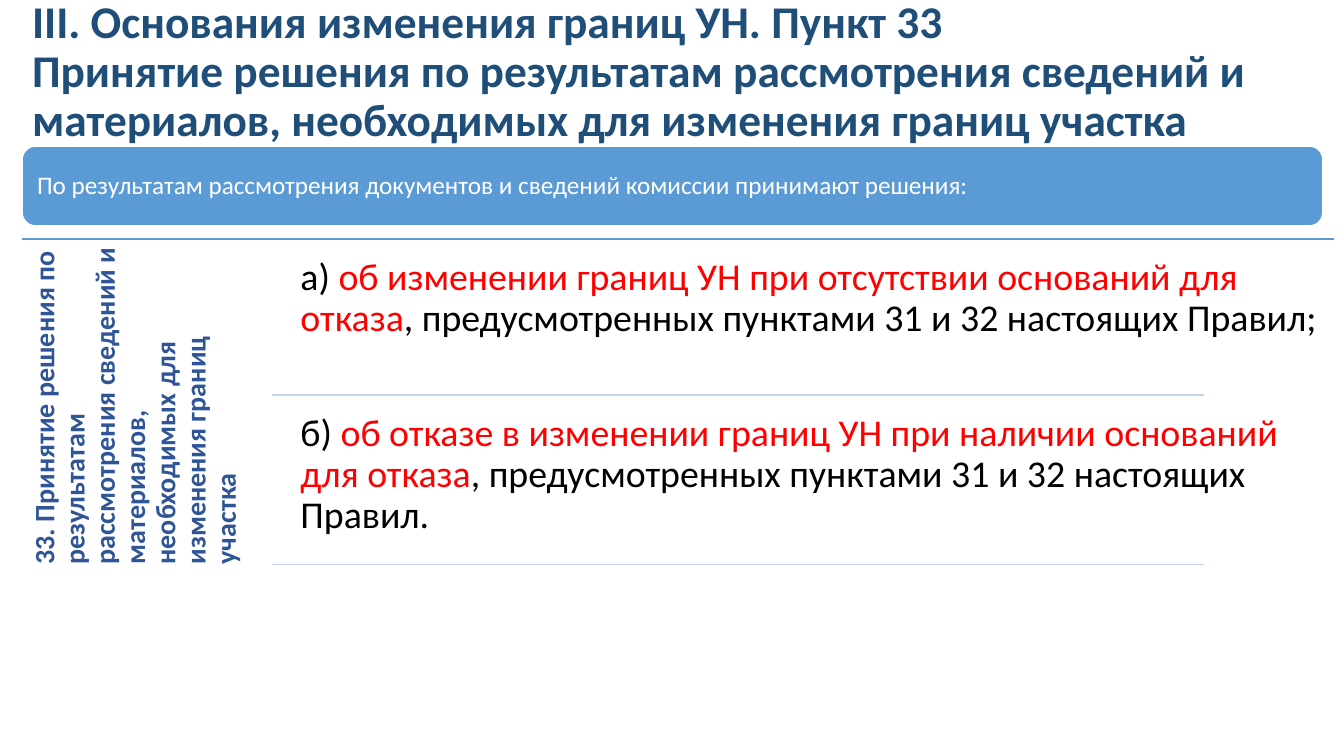
from dataclasses import dataclass

from lxml import etree
from pptx import Presentation
from pptx import util as u
from pptx.dml import color as col
from pptx.enum import shapes, text
from pptx.oxml import ns


@dataclass(frozen=True)
class Theme:
    font: str = "Calibri"
    # Colours
    title: str = "1F4E79"
    side: str = "2F5597"
    blue: str = "5B9BD5"
    pale: str = "C4D5EB"
    white: str = "FFFFFF"
    black: str = "000000"
    red: str = "FF0000"
    # Type sizes in points
    head: float = 32.4
    body: float = 27
    label: float = 20
    note: float = 18


def rgb(code):
    return col.RGBColor.from_string(code)


def write(frame, parts, font, size, bold=False, inset=0.1, mid=False, turn=None):
    """Fill a frame with (text, colour) parts; a newline breaks the line."""
    frame.word_wrap = True
    frame.auto_size = text.MSO_AUTO_SIZE.NONE
    frame.vertical_anchor = text.MSO_ANCHOR.MIDDLE if mid else text.MSO_ANCHOR.TOP
    frame.margin_left = frame.margin_right = u.Inches(inset)
    frame.margin_top = frame.margin_bottom = u.Inches(min(inset, 0.05) if mid else inset)
    if turn:
        frame._txBody.bodyPr.set("vert", turn)
    para = frame.paragraphs[0]
    para.alignment = text.PP_ALIGN.LEFT
    para.line_spacing = 0.9
    for words, tone in parts:
        for n, line in enumerate(words.split("\n")):
            if n:
                para.add_line_break()
            run = para.add_run()
            run.text = line
            run.font.name = font
            run.font.size = u.Pt(size)
            run.font.bold = bold
            run.font.color.rgb = rgb(tone)


class Page:
    """One slide on a grid of ten columns and ten rows to the inch."""

    def __init__(self, theme):
        self.theme = theme
        self.deck = Presentation()
        self.deck.slide_width = u.Inches(13.33)
        self.deck.slide_height = u.Inches(7.5)
        self.slide = self.deck.slides.add_slide(self.deck.slide_layouts[6])

    def grid(self, *cells):
        return [u.Inches(cell / 10) for cell in cells]

    def label(self, box, parts, size, **style):
        shape = self.slide.shapes.add_textbox(*self.grid(*box))
        write(shape.text_frame, parts, self.theme.font, size, **style)

    def panel(self, box, parts, size, **style):
        shape = self.slide.shapes.add_shape(
            shapes.MSO_SHAPE.ROUNDED_RECTANGLE, *self.grid(*box))
        shape.shadow.inherit = False
        shape.fill.solid()
        shape.fill.fore_color.rgb = rgb(self.theme.blue)
        shape.line.color.rgb = rgb(self.theme.white)
        shape.line.width = u.Pt(1)
        write(shape.text_frame, parts, self.theme.font, size, **style)

    def rule(self, left, right, row, tone):
        line = self.slide.shapes.add_connector(
            shapes.MSO_CONNECTOR.STRAIGHT, *self.grid(left, row, right, row))
        line.line.color.rgb = rgb(tone)
        line.line.width = u.Pt(1)
        etree.SubElement(line._element.spPr, ns.qn("a:effectLst"))


def main():
    theme = Theme()
    page = Page(theme)
    edge = 2.2
    topic = ("Принятие решения по результатам рассмотрения сведений и "
             "материалов, необходимых для изменения границ участка")

    # Title
    page.label((edge, 1.3, 130.1, 11.9),
               [("III. Основания изменения границ УН. Пункт 33 \n" + topic, theme.title)],
               theme.head, bold=True, mid=True)

    # Banner
    page.panel((edge, 14.5, 129, 7.9),
               [("По результатам рассмотрения документов и сведений "
                 "комиссии принимают решения:", theme.white)],
               theme.note, inset=0.11, mid=True)

    # Side heading under the main rule
    page.rule(edge, 132.3, 23.7, theme.blue)
    page.label((edge, 23.7, 24.8, 33.1), [("33. " + topic, theme.side)],
               theme.label, bold=True, inset=0.08, turn="vert270")

    # Decisions, each closed by a pale rule
    ending = ", предусмотренных пунктами 31 и 32 настоящих Правил"
    choices = [
        ("а) ", "об изменении границ УН при отсутствии оснований для отказа",
         ";", 24.5, 39.2, 103.5),
        ("б) ", "об отказе в изменении границ УН при наличии оснований для отказа",
         ".", 40, 56, 100.4),
    ]
    for mark, choice, stop, top, base, width in choices:
        page.label((28.7, top, width, base - top),
                   [(mark, theme.black), (choice, theme.red), (ending + stop, theme.black)],
                   theme.body, inset=0.11)
        page.rule(27, 119.4, base, theme.pale)

    page.deck.save("out.pptx")


if __name__ == "__main__":
    main()
